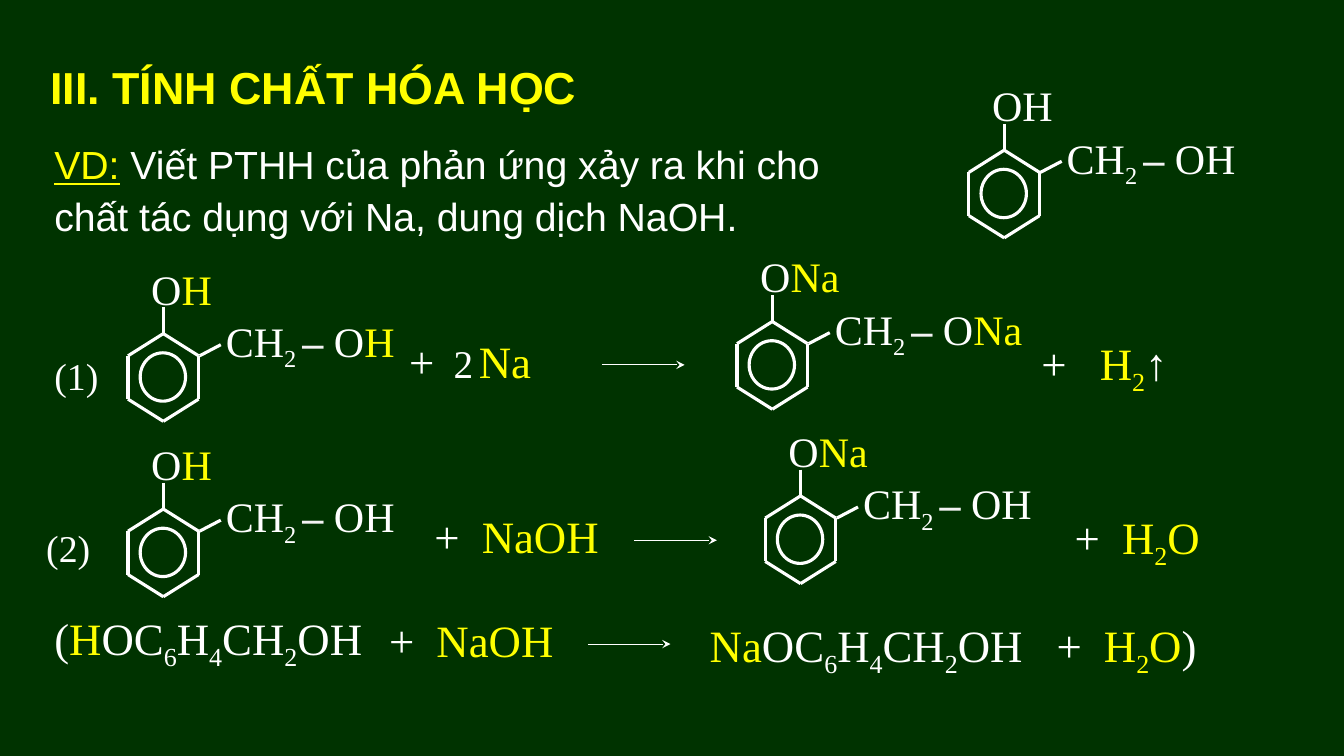
from itertools import pairwise

from lxml.etree import SubElement
from pptx import Presentation
from pptx.dml.color import RGBColor
from pptx.enum.shapes import MSO_CONNECTOR as Connector, MSO_SHAPE as Shape
from pptx.enum.text import MSO_ANCHOR as Anchor, MSO_AUTO_SIZE as AutoSize, PP_ALIGN as Align
from pptx.oxml.ns import qn
from pptx.util import Inches, Pt

BACKGROUND = RGBColor(0x00, 0x33, 0x00)
WHITE = RGBColor(0xFF, 0xFF, 0xFF)
LIGHT = RGBColor(0xF2, 0xF2, 0xF2)
YELLOW = RGBColor(0xFF, 0xFF, 0x00)
SERIF = "Times New Roman"

presentation = Presentation()
presentation.slide_width = Inches(13.33)
presentation.slide_height = Inches(7.5)
slide = presentation.slides.add_slide(presentation.slide_layouts[5])
slide.background.fill.solid()
slide.background.fill.fore_color.rgb = BACKGROUND


def add_text(shapes, box, runs, size, font=SERIF, inset=(0.1, 0.05), tabs=()):
    frame = shapes.add_textbox(*map(Inches, box)).text_frame
    frame.word_wrap = True
    frame.margin_left = frame.margin_right = Inches(inset[0])
    frame.margin_top = frame.margin_bottom = Inches(inset[1])
    paragraph = frame.paragraphs[0]
    paragraph.font.name = font
    paragraph.font.size = Pt(size)
    if tabs:
        tab_list = paragraph._p.get_or_add_pPr()
        stops = tab_list.makeelement(qn("a:tabLst"))
        tab_list.insert(0, stops)
        for position in tabs:
            SubElement(stops, qn("a:tab"), pos=str(Inches(position)), algn="l")
    for text, color, *style in runs:
        run = paragraph.add_run()
        run.text = text
        run.font.color.rgb = color
        if "sub" in style:
            run.font._element.set("baseline", "-25000")
        if "bold" in style:
            run.font.bold = True
        if "underline" in style:
            run.font.underline = True
    return paragraph


def add_line(shapes, start, end, width):
    line = shapes.add_connector(Connector.STRAIGHT, *map(Inches, (*start, *end)))
    line.line.color.rgb = WHITE
    line.line.width = Pt(width)
    SubElement(line._element.spPr, qn("a:effectLst"))
    return line


title = slide.shapes.title
title.left, title.top, title.width, title.height = map(Inches, (0.4, 0.6, 5.82, 0.58))
title.text_frame.text = "III. TÍNH CHẤT HÓA HỌC"
title.text_frame.auto_size = AutoSize.NONE
title.text_frame.vertical_anchor = Anchor.BOTTOM
heading = title.text_frame.paragraphs[0]
heading.alignment = Align.LEFT
heading.font.name = "Arial"
heading.font.size = Pt(32)
heading.font.bold = True
heading.font.color.rgb = YELLOW

exercise = add_text(
    slide.shapes, (0.44, 1.3, 8.45, 1.1),
    [("VD:", YELLOW, "underline"),
     (" Viết PTHH của phản ứng xảy ra khi cho chất tác dụng với Na, dung dịch NaOH.", WHITE)],
    28, "Arial")
exercise.line_spacing = 1.1

HEXAGON = [(0, 0), (0.35, 0.22), (0.35, 0.65), (0, 0.87), (-0.35, 0.65), (-0.35, 0.22), (0, 0)]
BONDS = [*pairwise(HEXAGON), ((0, -0.26), (0, 0.01)), ((0.57, 0.11), (0.36, 0.22))]
CH2 = [("CH", WHITE), ("2 ", WHITE, "sub"), ("–", LIGHT, "bold")]
ALCOHOL = [(" OH", WHITE)]

molecules = [
    (9.96, 1.49, [("OH", WHITE)], ALCOHOL),
    (1.62, 3.31, [("O", WHITE), ("H", YELLOW)], [(" O", WHITE), ("H", YELLOW)]),
    (7.66, 3.19, [("O", WHITE), ("Na", YELLOW)], [(" O", WHITE), ("Na", YELLOW)]),
    (1.62, 5.05, [("O", WHITE), ("H", YELLOW)], ALCOHOL),
    (7.94, 4.92, [("O", WHITE), ("Na", YELLOW)], ALCOHOL),
]
for x, y, top_group, side_group in molecules:
    shapes = slide.shapes.add_group_shape().shapes
    for (x1, y1), (x2, y2) in BONDS:
        add_line(shapes, (x + x1, y + y1), (x + x2, y + y2), 2.25)
    ring = shapes.add_shape(Shape.OVAL, *map(Inches, (x - 0.23, y + 0.19, 0.45, 0.48)))
    ring.shadow.inherit = False
    ring.fill.background()
    ring.line.color.rgb = WHITE
    ring.line.width = Pt(2.25)
    add_text(shapes, (x + 0.62, y - 0.18, 2.12, 0.51), CH2 + side_group, 30, inset=(0, 0))
    add_text(shapes, (x - 0.12, y - 0.7, 0.95, 0.5), top_group, 30, inset=(0, 0))

PLUS = ("+\t", WHITE)
WATER = [("H", YELLOW), ("2", YELLOW, "sub"), ("O", YELLOW)]
PHENOL = [("OC", WHITE), ("6", WHITE, "sub"), ("H", WHITE), ("4", WHITE, "sub"),
          ("CH", WHITE), ("2", WHITE, "sub"), ("OH", WHITE)]
terms = [
    (3.96, 3.26, 2.25, [PLUS, ("Na", YELLOW)], [0.69]),
    (10.23, 3.28, 2.25, [PLUS, ("H", YELLOW), ("2", YELLOW, "sub"), ("↑", WHITE)], [0.58]),
    (4.21, 5, 2.25, [PLUS, ("NaOH", YELLOW)], [0.47]),
    (10.56, 5.01, 2.25, WATER[:0] + [PLUS] + WATER, [0.47]),
    (0.44, 6.01, 3.54, [("(", WHITE), ("H", YELLOW)] + PHENOL, []),
    (3.76, 6.03, 2.25, [PLUS, ("NaOH", YELLOW)], [0.47]),
    (6.94, 6.08, 5.61, [("Na", YELLOW), *PHENOL, ("\t+\t", WHITE), *WATER, (")", WHITE)],
     [3.44, 3.91]),
]
for left, top, width, runs, tabs in terms:
    add_text(slide.shapes, (left, top, width, 0.64), runs, 32, tabs=tabs)

for text, left, top, size in [("2", 4.4, 3.32, 28), ("(1)", 0.44, 3.45, 27), ("(2)", 0.36, 5.16, 27)]:
    add_text(slide.shapes, (left, top, 0.73, 0.56), [(text, WHITE)], size)

for left, y in [(5.97, 3.62), (6.29, 5.36), (5.83, 6.39)]:
    arrow = add_line(slide.shapes, (left, y), (left + 0.82, y), 0.75)
    SubElement(arrow.line._get_or_add_ln(), qn("a:tailEnd"), type="stealth")

presentation.save("out.pptx")
